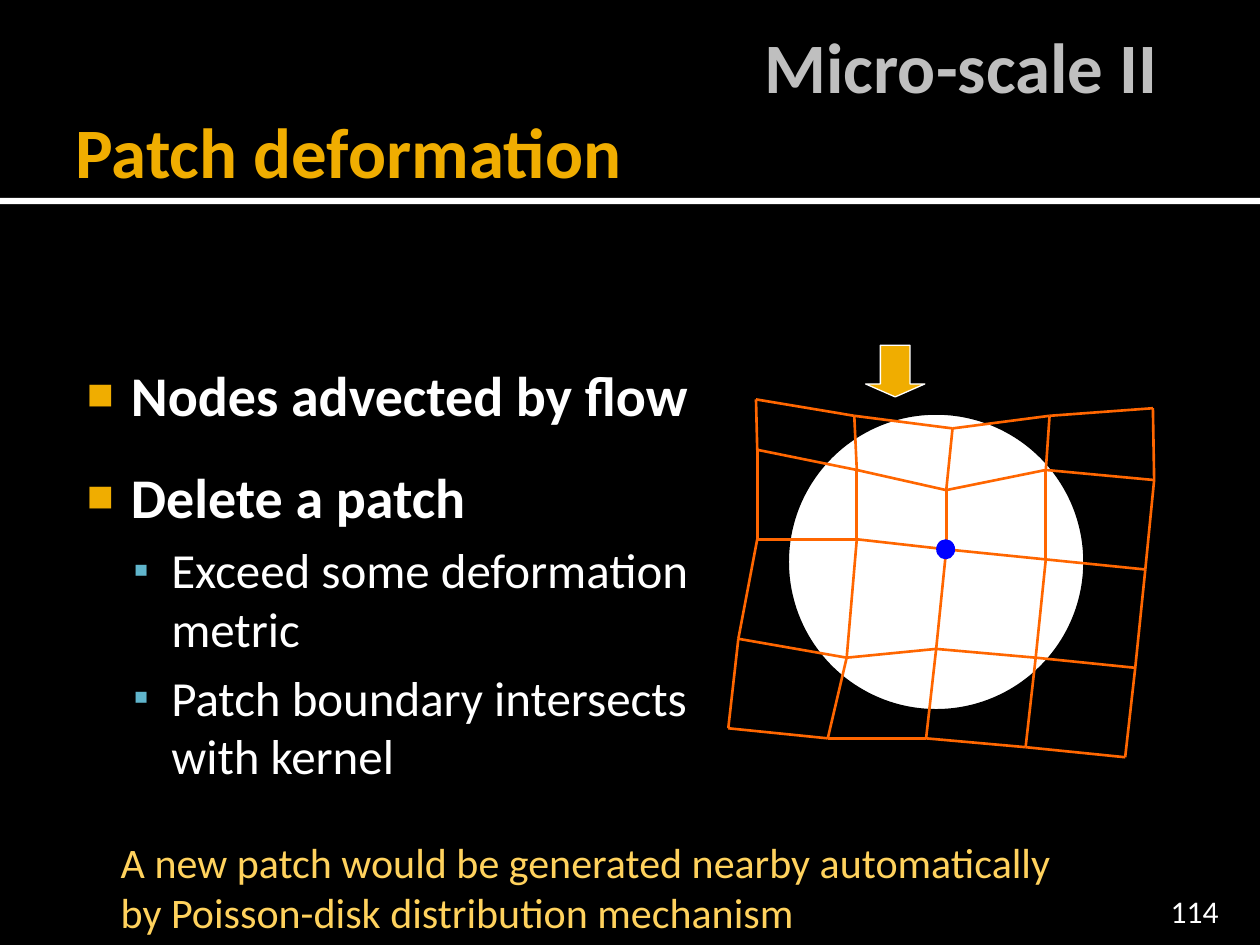
from dataclasses import dataclass

from pptx import Presentation
from pptx.dml.color import RGBColor
from pptx.enum.shapes import MSO_CONNECTOR, MSO_SHAPE
from pptx.enum.text import MSO_ANCHOR, PP_ALIGN
from pptx.oxml.ns import qn
from pptx.util import Inches, Pt
from lxml.etree import SubElement


@dataclass(frozen=True)
class Theme:
    face: str = "Calibri"
    back: str = "000000"
    white: str = "FFFFFF"
    grey: str = "BFBFBF"
    gold: str = "F0AD00"
    pale: str = "FFD25D"
    teal: str = "60B5CC"
    mesh: str = "FF6600"
    blue: str = "0000FF"
    title: float = 40.5
    head: float = 32
    item: float = 28
    note: float = 24
    page: float = 18


THEME = Theme()
COLS, ROWS = 100, 75
WIDE, HIGH = Inches(10), Inches(7.5)

# Bullet levels: sign, colour, size in percent, left margin and hang in columns
MARKS = (
    ("■", THEME.gold, 80, 4.8, 3.5),
    ("▪", THEME.teal, 90, 8, 3),
)
POINTS = (
    (0, "Nodes advected by flow"),
    (0, "Delete a patch"),
    (1, "Exceed some deformation metric"),
    (1, "Patch boundary intersects with kernel"),
)
# Mesh nodes, row by row, in columns and rows of the slide grid
NODES = (
    ((60, 31.7), (67.8, 33), (75.6, 34), (83.3, 33), (91.5, 32.4)),
    ((60.1, 35.7), (68, 37.3), (75.1, 38.9), (83, 37.3), (91.6, 38.1)),
    ((60.1, 42.8), (68, 42.8), (75.1, 43.6), (83, 44.4), (90.9, 45.2)),
    ((58.6, 50.7), (67.2, 52.2), (74.3, 51.5), (82.2, 52.2), (90.1, 53)),
    ((57.8, 57.8), (65.7, 58.6), (73.5, 58.6), (81.4, 59.3), (89.3, 60.1)),
)


def across(cols):
    return round(WIDE * cols / COLS)


def down(rows):
    return round(HIGH * rows / ROWS)


def place(x, y, w, h):
    return across(x), down(y), across(w), down(h)


def assign(obj, values):
    for name, value in values.items():
        setattr(obj, name, value)


class Painter:
    def __init__(self, theme, slide):
        self.theme, self.slide = theme, slide
        self.paint(slide.background.fill, theme.back)

    def paint(self, fill, color):
        fill.solid()
        fill.fore_color.rgb = RGBColor.from_string(color)

    def shape(self, kind, box, color, edge=None, width=0):
        shape = self.slide.shapes.add_shape(kind, *place(*box))
        shape.shadow.inherit = False
        self.paint(shape.fill, color)
        if edge:
            self.paint(shape.line.fill, edge)
            shape.line.width = Pt(width)
        else:
            shape.line.fill.background()
        return shape

    def text(self, box, inset=(1, 0.5, 1, 0.5), anchor=MSO_ANCHOR.TOP):
        """Add an empty text box; inset is left, top, right, bottom."""
        frame = self.slide.shapes.add_textbox(*place(*box)).text_frame
        left, top, right, bottom = inset
        assign(frame, {
            "word_wrap": True,
            "vertical_anchor": anchor,
            "margin_left": across(left),
            "margin_top": down(top),
            "margin_right": across(right),
            "margin_bottom": down(bottom),
        })
        return frame

    def phrase(self, frame, words, size, color, bold=False, **form):
        """Fill the first free paragraph of the frame."""
        para = frame.paragraphs[0]
        if para.runs:
            para = frame.add_paragraph()
        assign(para, form)
        run = para.add_run()
        run.text = words
        assign(run.font, {"name": self.theme.face, "size": Pt(size), "bold": bold})
        run.font.color.rgb = RGBColor.from_string(color)
        return para

    def indent(self, para, left, hang=0):
        props = para._p.get_or_add_pPr()
        props.set("marL", str(across(left)))
        props.set("indent", str(-across(hang)))
        return props

    def bullet(self, para, sign, color, share, left, hang):
        props = self.indent(para, left, hang)
        tint = SubElement(props, qn("a:buClr"))
        SubElement(tint, qn("a:srgbClr"), val=color)
        SubElement(props, qn("a:buSzPct"), val=str(share * 1000))
        SubElement(props, qn("a:buFont"), typeface="Arial")
        SubElement(props, qn("a:buChar"), char=sign)

    def mesh(self, nodes, color, width):
        """Join each node to its neighbours along rows and columns."""
        group = self.slide.shapes.add_group_shape()
        for chain in (*nodes, *zip(*nodes)):
            for (x1, y1), (x2, y2) in zip(chain, chain[1:]):
                line = group.shapes.add_connector(
                    MSO_CONNECTOR.STRAIGHT,
                    across(x1), down(y1), across(x2), down(y2))
                self.paint(line.line.fill, color)
                line.line.width = Pt(width)
                SubElement(line._element.spPr, qn("a:effectLst"))


def main():
    deck = Presentation()
    assign(deck, {"slide_width": WIDE, "slide_height": HIGH})
    art = Painter(THEME, deck.slides.add_slide(deck.slide_layouts[6]))

    art.shape(MSO_SHAPE.RECTANGLE, (0, 15.7, 100, 0.5), THEME.white)

    body = art.text((5, 19.4, 54.4, 50.6), inset=(0.6, 9.2, 1, 0.5))
    for index, (level, words) in enumerate(POINTS):
        size = (THEME.head, THEME.item)[level]
        gap = (20, 0.2 * size)[level] if index else 0
        para = art.phrase(body, words, size, THEME.white, level == 0,
                          level=level, space_before=Pt(gap))
        art.bullet(para, *MARKS[level])

    title = art.text((5, 1.7, 90, 13.7), (1, 0.5, 0.5, 0.5), MSO_ANCHOR.MIDDLE)
    topic = art.phrase(title, "Micro-scale II", THEME.title, THEME.grey, True)
    art.indent(topic, 54.7)
    art.phrase(title, "Patch deformation", THEME.title, THEME.gold, True)

    note = art.text((8.6, 65.9, 78.9, 9.1))
    art.phrase(note, "A new patch would be generated nearby automatically "
               "by Poisson-disk distribution mechanism", THEME.note, THEME.pale)

    page = art.text((89.7, 70.8, 8, 3), (1, 0.5, 1, 0), MSO_ANCHOR.BOTTOM)
    art.phrase(page, "114", THEME.page, THEME.white, alignment=PP_ALIGN.RIGHT)

    art.shape(MSO_SHAPE.OVAL, (62.5, 32.8, 23.6, 23.6), THEME.white, THEME.back, 1.75)
    art.mesh(NODES, THEME.mesh, 1.5)
    art.shape(MSO_SHAPE.OVAL, (74.3, 42.8, 1.5, 1.6), THEME.blue)
    art.shape(MSO_SHAPE.DOWN_ARROW, (68.7, 27.4, 4.7, 4.1),
              THEME.gold, THEME.white, 0.75).adjustments[1] = 0.25

    deck.save("out.pptx")


if __name__ == "__main__":
    main()
